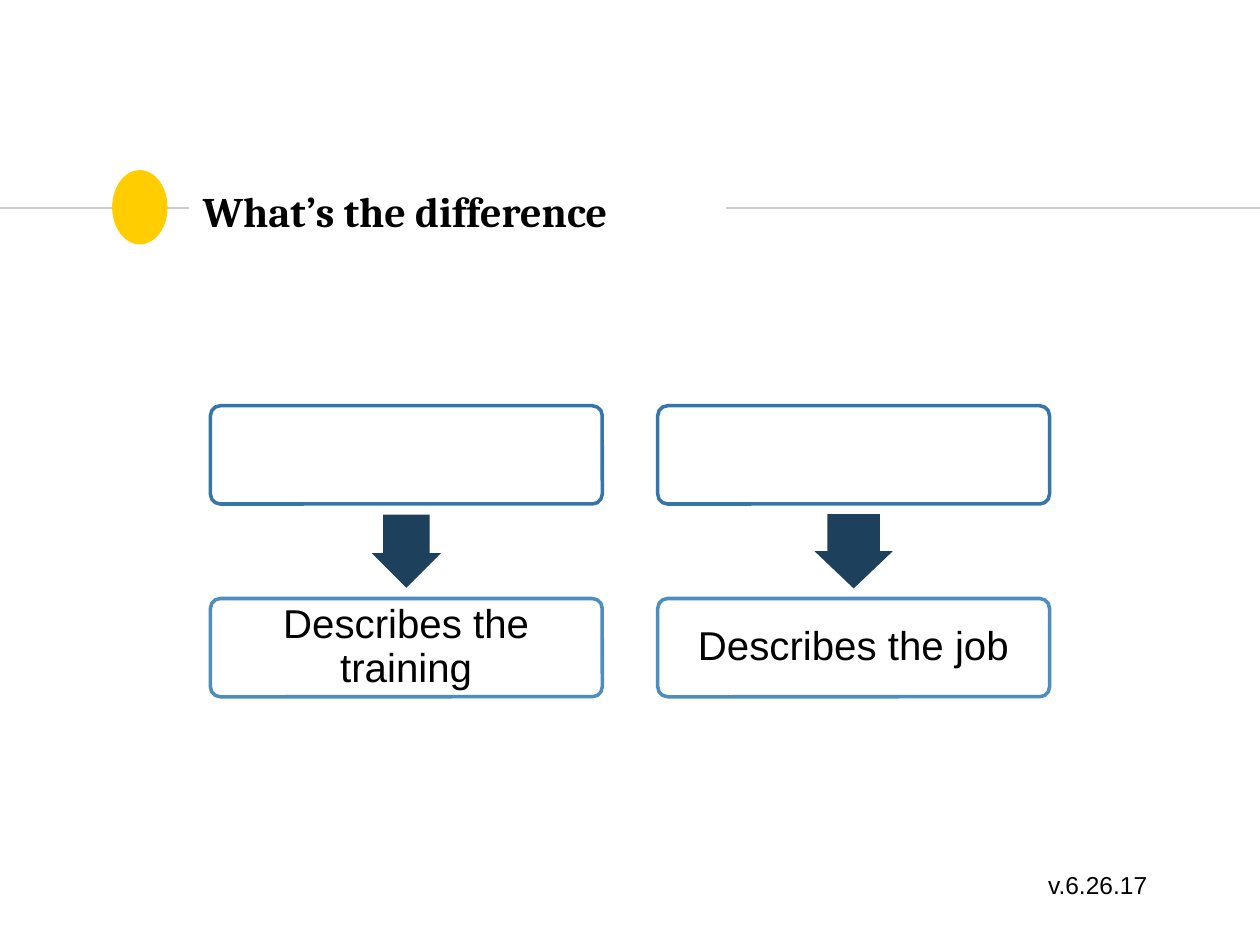
from dataclasses import dataclass
from lxml import etree
from pptx import Presentation
from pptx.dml.color import RGBColor
from pptx.enum.shapes import MSO_CONNECTOR, MSO_SHAPE
from pptx.enum.text import MSO_ANCHOR, MSO_AUTO_SIZE, PP_ALIGN
from pptx.oxml.ns import qn
from pptx.util import Inches, Pt

LINE = MSO_CONNECTOR.STRAIGHT
OVAL, ROUND, ARROW = MSO_SHAPE.OVAL, MSO_SHAPE.ROUNDED_RECTANGLE, MSO_SHAPE.RIGHT_ARROW
MIDDLE = MSO_ANCHOR.MIDDLE
LEFT, CENTER = PP_ALIGN.LEFT, PP_ALIGN.CENTER
FIT = MSO_AUTO_SIZE.SHAPE_TO_FIT_TEXT


@dataclass
class Theme:
    head: str = "Cambria"
    body: str = "Arial"
    ink: str = "000000"
    rule: str = "CCCCCC"
    dot: str = "FFCD00"
    paper: str = "FFFFFF"
    top: str = "3575A9"
    low: str = "3A81BA"
    arrow: str = "1D405D"
    big: int = 24
    mid: int = 23
    small: int = 14


T = Theme()
TITLE = "What’s the difference"
NOTE = "v.6.26.17"
COLS = [
    {"text": "Describes the training", "arrow": (0.58, 0.55)},
    {"text": "Describes the job", "arrow": (0.59, 0.62)},
]
RULES = [(0, 1.5), (5.76, 10)]
WIDE, HIGH = 10, 7.5
RULE_Y = 0.22 * HIGH
BOX_W, BOX_H, GAP = 3.11, 0.78, 0.44
ROWS = [3.22, 4.75]
EDGE = (WIDE - len(COLS) * BOX_W - (len(COLS) - 1) * GAP) / 2


def rgb(code):
    return RGBColor.from_string(code)


def fade(fill, share):
    node = fill._xPr.find(qn("a:solidFill"))[0]
    etree.SubElement(node, qn("a:alpha")).set("val", str(share * 1000))


def write(frame, text, font, size, align=LEFT, inset=None, bold=False):
    if inset is not None:
        frame.margin_left = frame.margin_right = Inches(inset)
        frame.margin_top = frame.margin_bottom = Inches(inset)
    para = frame.paragraphs[0]
    para.alignment = align
    run = para.add_run()
    run.text = text
    run.font.name, run.font.size, run.font.bold = font, Pt(size), bold
    run.font.color.rgb = rgb(T.ink)
    return para


def draw(kind, x, y, w, h, fill, line=None):
    shape = slide.shapes.add_shape(kind, *map(Inches, (x, y, w, h)))
    shape.shadow.inherit = False
    shape.fill.solid()
    shape.fill.fore_color.rgb = rgb(fill)
    if line:
        shape.line.color.rgb = rgb(line)
        shape.line.width = Pt(2)
        shape.adjustments[0] = 0.1
    else:
        shape.line.fill.background()
    return shape


deck = Presentation()
deck.slide_width, deck.slide_height = Inches(WIDE), Inches(HIGH)
slide = deck.slides.add_slide(deck.slide_layouts[5])

for start, end in RULES:
    rule = slide.shapes.add_connector(LINE, *map(Inches, (start, RULE_Y, end, RULE_Y)))
    rule.line.color.rgb = rgb(T.rule)
    rule.line.width = Pt(0.75)
    etree.SubElement(rule._element.spPr, qn("a:effectLst"))
draw(OVAL, 0.89, 1.35, 0.44, 0.59, T.dot)

title = slide.shapes.title
title.left, title.top, title.width, title.height = map(Inches, (1.51, 1.35, 4.24, 0.64))
title.text_frame.vertical_anchor = MIDDLE
write(title.text_frame, TITLE, T.head, T.big, inset=0.1, bold=True)

for i, col in enumerate(COLS):
    x = EDGE + i * (BOX_W + GAP)
    draw(ROUND, x, ROWS[0], BOX_W, BOX_H, T.paper, T.top)

    w, h = col["arrow"]
    mid = (ROWS[0] + ROWS[1] + BOX_H) / 2
    arrow = draw(ARROW, x + (BOX_W - w) / 2, mid - h / 2, w, h, T.arrow)
    arrow.rotation = 90
    arrow.adjustments[0], arrow.adjustments[1] = 0.67, 0.5

    box = draw(ROUND, x, ROWS[1], BOX_W, BOX_H, T.paper, T.low)
    fade(box.fill, 90)
    fade(box.line.fill, 90)
    frame = box.text_frame
    frame.word_wrap, frame.vertical_anchor = True, MIDDLE
    para = write(frame, col["text"], T.body, T.mid, CENTER, 0.05)
    para.line_spacing = 0.9

note = slide.shapes.add_textbox(*map(Inches, (8.22, 6.86, 1.01, 0.34))).text_frame
note.word_wrap, note.auto_size = False, FIT
write(note, NOTE, T.body, T.small)

deck.save("out.pptx")
